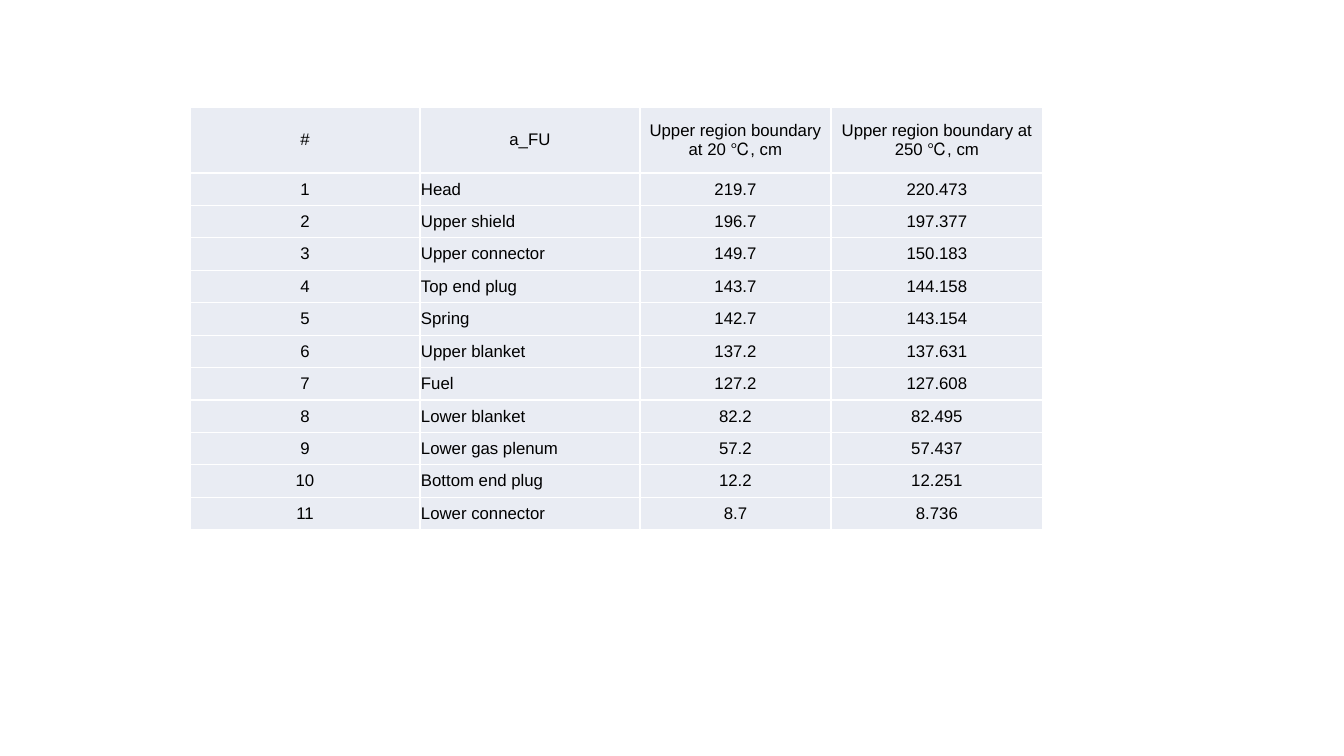
import pptx
import pptx.util
import pptx.dml.color
import pptx.enum.text
import pptx.oxml
import pptx.oxml.ns

SCALE = 914400 / 100.8
WIDE, HIGH = 1344, 756
FONT = "Arial"
INK, PALE, WHITE = "000000", "E9ECF3", "FFFFFF"
HEAD = ("#", "a_FU", "Upper region boundary at 20 ℃, cm",
        "Upper region boundary at 250 ℃, cm")
PARTS = (
    ("Head", "219.7", "220.473"),
    ("Upper shield", "196.7", "197.377"),
    ("Upper connector", "149.7", "150.183"),
    ("Top end plug", "143.7", "144.158"),
    ("Spring", "142.7", "143.154"),
    ("Upper blanket", "137.2", "137.631"),
    ("Fuel", "127.2", "127.608"),
    ("Lower blanket", "82.2", "82.495"),
    ("Lower gas plenum", "57.2", "57.437"),
    ("Bottom end plug", "12.2", "12.251"),
    ("Lower connector", "8.7", "8.736"),
)
COLS = (230, 220, 191, 212)
TOP = 66


def px(size):
    return pptx.util.Emu(round(size * SCALE))


def color(code):
    return pptx.dml.color.RGBColor.from_string(code)


def border(cell, code, points):
    props = cell._tc.get_or_add_tcPr()
    for side in ("lnL", "lnR", "lnT", "lnB"):
        props.append(pptx.oxml.parse_xml(
            f'<a:{side} {pptx.oxml.ns.nsdecls("a")} w="{pptx.util.Pt(points)}">'
            f'<a:solidFill><a:srgbClr val="{code}"/></a:solidFill></a:{side}>'))


def write(cell, text, align):
    border(cell, WHITE, 0.96)
    cell.fill.solid()
    cell.fill.fore_color.rgb = color(PALE)
    cell.margin_left = cell.margin_right = px(1)
    cell.margin_top = cell.margin_bottom = px(6)
    cell.vertical_anchor = pptx.enum.text.MSO_ANCHOR.MIDDLE
    line = cell.text_frame.paragraphs[0]
    line.alignment = align
    run = line.add_run()
    run.text = text
    run.font.name = FONT
    run.font.size = pptx.util.Pt(12)
    run.font.bold = False
    run.font.color.rgb = color(INK)


def bounds(slide, left, top, width, height):
    rows = [HEAD] + [(str(n), *part) for n, part in enumerate(PARTS, 1)]
    frame = slide.shapes.add_table(
        len(rows), len(COLS), px(left), px(top), px(width), px(height))
    table = frame.table
    table.first_row = table.horz_banding = False
    for col, share in zip(table.columns, COLS):
        col.width = px(width * share / sum(COLS))
    for r, row in enumerate(rows):
        table.rows[r].height = px((height - TOP) / len(PARTS) if r else TOP)
        for c, text in enumerate(row):
            name = r > 0 and c == 1
            align = pptx.enum.text.PP_ALIGN
            write(table.cell(r, c), text, align.LEFT if name else align.CENTER)


def main():
    deck = pptx.Presentation()
    deck.slide_width, deck.slide_height = px(WIDE), px(HIGH)
    slide = deck.slides.add_slide(deck.slide_layouts[6])
    bounds(slide, 190, 107, 853, 423)
    deck.save("out.pptx")


if __name__ == "__main__":
    main()
